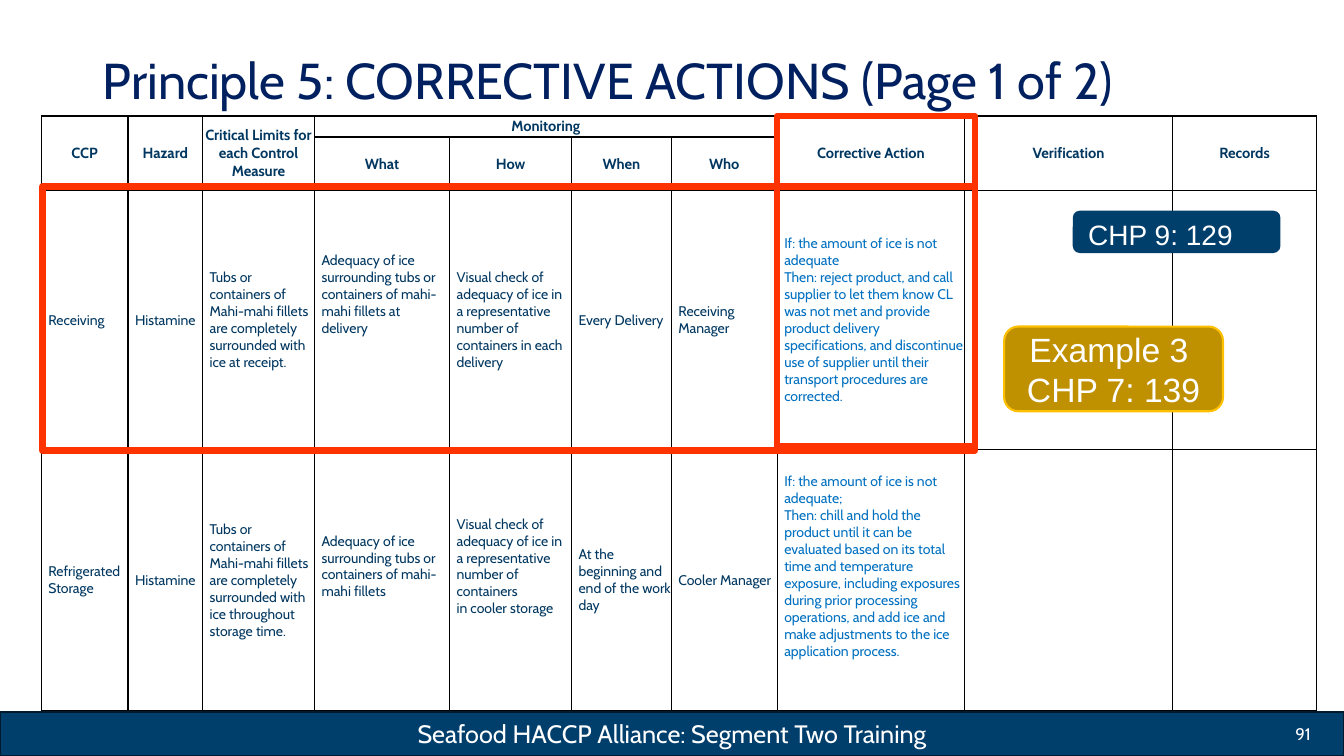
from lxml import etree
from pptx import Presentation
from pptx.dml.color import RGBColor
from pptx.enum import shapes, text
from pptx.oxml import ns
from pptx.util import Inches, Pt

NAVY = RGBColor(0x00, 0x3E, 0x6C)
EDGE = RGBColor(0x00, 0x1B, 0x2F)
INK = RGBColor(0x00, 0x37, 0x60)
BLUE = RGBColor(0x00, 0x70, 0xC0)
TITLE = RGBColor(0x00, 0x20, 0x60)
GOLD = RGBColor(0xBF, 0x90, 0x00)
AMBER = RGBColor(0xFF, 0xC0, 0x00)
RED = RGBColor(0xFF, 0x33, 0x00)
WHITE = RGBColor(0xFF, 0xFF, 0xFF)

RECT = shapes.MSO_SHAPE.RECTANGLE
ROUND = shapes.MSO_SHAPE.ROUNDED_RECTANGLE
LEFT, MID, RIGHT = text.PP_ALIGN.LEFT, text.PP_ALIGN.CENTER, text.PP_ALIGN.RIGHT

COLS = [0.86, 0.74, 1.11, 1.34, 1.21, 0.99, 1.05, 1.86, 2.06, 1.43]
ROWS = [0.21, 0.47, 2.57, 2.59]
TOP = ["CCP", "Hazard", "Critical Limits for each Control Measure", "Monitoring",
       "", "", "", "Corrective Action", "Verification", "Records"]
SUB = ["", "", "", "What", "How", "When", "Who", "", "", ""]
STEPS = [
    ["Receiving", "Histamine",
     "Tubs or containers of Mahi-mahi fillets are completely surrounded with ice at receipt.",
     "Adequacy of ice surrounding tubs or containers of mahi-mahi fillets at delivery",
     "Visual check of adequacy of ice in a representative number of containers in each delivery",
     "Every Delivery", "Receiving Manager",
     "If: the amount of ice is not adequate\n"
     "Then: reject product, and call supplier to let them know CL was not met and provide "
     "product delivery specifications, and discontinue use of supplier until their "
     "transport procedures are corrected.", "", ""],
    ["Refrigerated Storage", "Histamine",
     "Tubs or containers of Mahi-mahi fillets are completely surrounded with ice "
     "throughout storage time.",
     "Adequacy of ice surrounding tubs or\ncontainers of mahi-mahi fillets",
     "Visual check of adequacy of ice in a representative number of containers\n"
     "in cooler storage",
     "At the beginning and end of the work day", "Cooler Manager",
     "If: the amount of ice is not adequate;\n"
     "Then: chill and hold the product until it can be evaluated based on its total\n"
     "time and temperature exposure, including exposures during prior processing "
     "operations, and add ice and make adjustments to the ice application process.",
     "", ""],
]
RAISED = {(2, 3): 0.5, (3, 3): 0.27, (3, 4): 0.27, (3, 7): 0.27}
ACTION = 7


class Page:
    """Draws styled elements on the current slide."""

    def __init__(self, deck):
        self.face = "Cabin"
        self.slide = deck.slides.add_slide(deck.slide_layouts[5])

    def put(self, frame, words, size, color, align=LEFT, bold=False, face=None):
        for i, line in enumerate(words.split("\n")):
            para = frame.add_paragraph() if i else frame.paragraphs[0]
            para.alignment = align
            run = para.add_run()
            run.text = line
            font = run.font
            font.name, font.size, font.bold = face or self.face, Pt(size), bold
            font.color.rgb = color

    def title(self, box, words):
        shape = self.slide.shapes.title
        shape.left, shape.top, shape.width, shape.height = map(Inches, box)
        frame = shape.text_frame
        frame.word_wrap = True
        frame.vertical_anchor = text.MSO_ANCHOR.MIDDLE
        frame.margin_bottom = Inches(0.65)
        self.put(frame, words, 36, TITLE)
        frame.paragraphs[0].line_spacing = 0.9

    def block(self, kind, box, fill=None, line=None, width=1.5):
        shape = self.slide.shapes.add_shape(kind, *map(Inches, box))
        shape.shadow.inherit = False
        if fill is None:
            shape.fill.background()
        else:
            shape.fill.solid()
            shape.fill.fore_color.rgb = fill
        if line is None:
            shape.line.fill.background()
        else:
            shape.line.color.rgb = line
            shape.line.width = Pt(width)
        frame = shape.text_frame
        frame.word_wrap = True
        frame.vertical_anchor = text.MSO_ANCHOR.MIDDLE
        return frame

    def label(self, box, words, size, align, anchor, face=None):
        frame = self.slide.shapes.add_textbox(*map(Inches, box)).text_frame
        frame.word_wrap = True
        frame.vertical_anchor = anchor
        self.put(frame, words, size, WHITE, align, face=face)

    def border(self, cell):
        props = cell._tc.get_or_add_tcPr()
        for side in ("lnL", "lnR", "lnT", "lnB"):
            line = etree.SubElement(props, ns.qn("a:" + side), w=str(Pt(1)))
            fill = etree.SubElement(line, ns.qn("a:solidFill"))
            etree.SubElement(fill, ns.qn("a:srgbClr"), val="000000")

    def table(self, box, cols, rows, data):
        grid = self.slide.shapes.add_table(len(rows), len(cols), *map(Inches, box)).table
        grid.first_row = grid.horz_banding = False
        for col, width in zip(grid.columns, cols):
            col.width = Inches(width)
        for row, height in zip(grid.rows, rows):
            row.height = Inches(height)
        for r, line in enumerate(data):
            for c, words in enumerate(line):
                self.cell(grid.cell(r, c), words, r, c)
        grid.cell(0, 3).merge(grid.cell(0, 6))
        for c, words in enumerate(data[1]):
            if not words:
                grid.cell(0, c).merge(grid.cell(1, c))

    def cell(self, cell, words, r, c):
        head = r < 2
        self.border(cell)
        cell.fill.solid()
        cell.fill.fore_color.rgb = WHITE
        cell.margin_top = cell.margin_right = 0
        cell.margin_left = Inches(0 if head else 0.07)
        cell.margin_bottom = Inches(RAISED.get((r, c), 0))
        cell.vertical_anchor = text.MSO_ANCHOR.MIDDLE
        if words:
            color = BLUE if c == ACTION and not head else INK
            self.put(cell.text_frame, words, 10.5 if head else 10, color,
                     MID if head else LEFT, head)


def main():
    deck = Presentation()
    deck.slide_width, deck.slide_height = Inches(13.33), Inches(7.5)
    page = Page(deck)
    page.title((0.92, 0.4, 12.31, 1.45), "Principle 5: CORRECTIVE ACTIONS (Page 1 of 2)")
    bar = page.block(RECT, (0, 7.06, 13.33, 0.44), NAVY, EDGE)
    page.put(bar, "Seafood HACCP Alliance: Segment Two Training", 18, WHITE, MID)
    page.table((0.41, 1.15, 12.66, 5.84), COLS, ROWS, [TOP, SUB, *STEPS])
    page.label((10.1, 7.08, 3, 0.4), "91", 12, RIGHT, text.MSO_ANCHOR.MIDDLE)
    note = page.block(ROUND, (9.96, 3.24, 2.17, 0.84), GOLD, AMBER)
    page.put(note, "Example 3 \nCHP 7: 139", 24, WHITE, MID, face="Arial")
    page.block(RECT, (7.71, 1.15, 1.96, 3.28), line=RED, width=4.5)
    page.block(ROUND, (10.64, 2.09, 2.06, 0.42), NAVY)
    page.label((10.07, 2.11, 2.88, 0.44), "CHP 9: 129", 20, MID,
               text.MSO_ANCHOR.TOP, "Arial")
    page.block(RECT, (0.42, 1.85, 9.25, 2.62), line=RED, width=4.5)
    deck.save("out.pptx")


if __name__ == "__main__":
    main()
